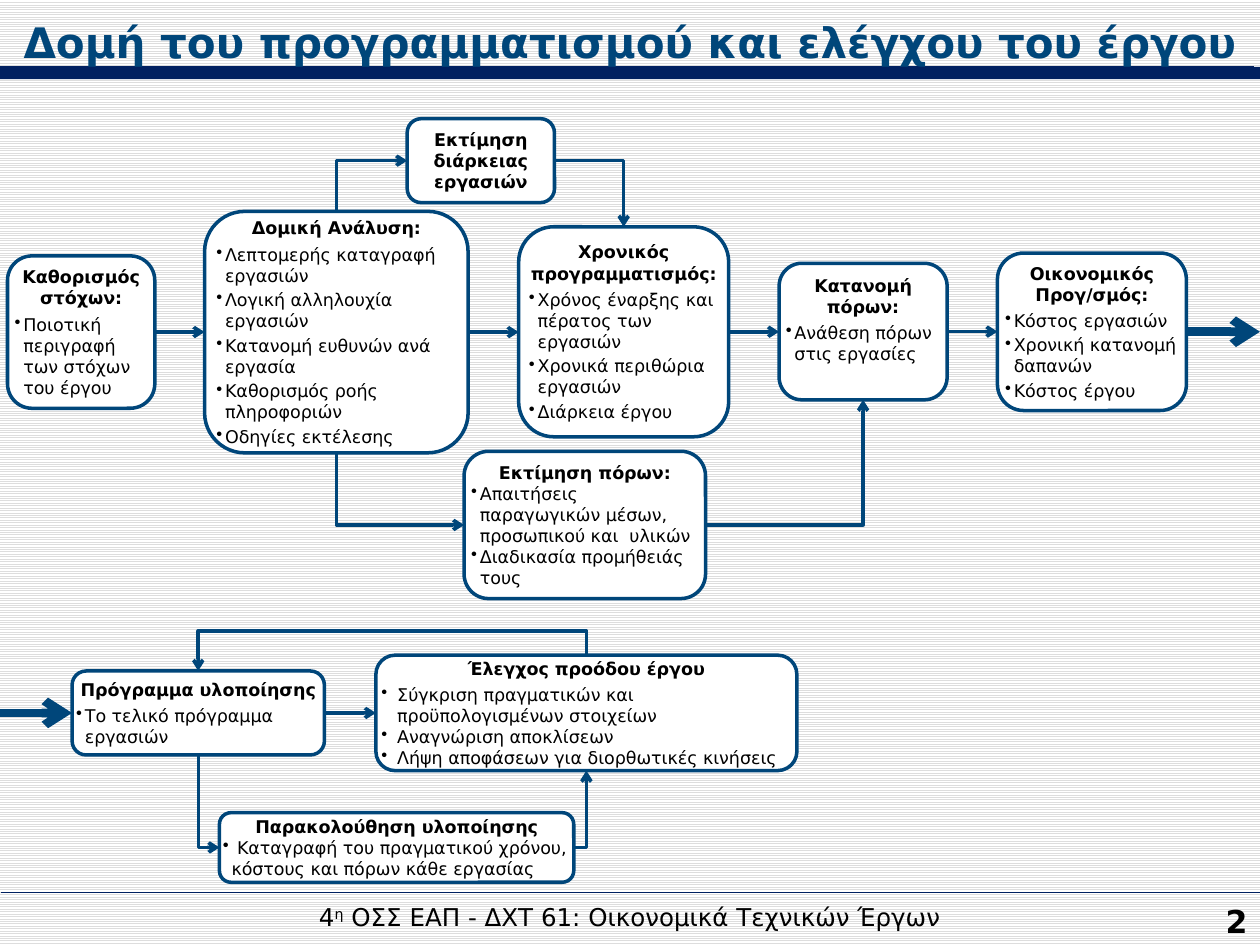
from pptx import Presentation
from pptx.dml.color import RGBColor
from pptx.enum.dml import MSO_PATTERN
from pptx.enum.shapes import MSO_CONNECTOR, MSO_SHAPE
from pptx.enum.text import MSO_ANCHOR, PP_ALIGN
from pptx.oxml.ns import qn
from pptx.util import Pt
from lxml.etree import SubElement

WIDE, HIGH = 720, 540
FONT = "DejaVu Sans"
HEX = {"blue": "00467A", "navy": "002060", "ink": "000000",
       "white": "FFFFFF", "stripe": "DDDDDD"}

TITLE = "Δομή του προγραμματισμού και ελέγχου του έργου"
FOOT = [("4", False), ("η", True),
        (" ΟΣΣ ΕΑΠ - ΔΧΤ 61: Οικονομικά Τεχνικών Έργων", False)]

# name: (left, top, width, height), heading, bullets,
#       (gap after heading, gap after bullet, indent)
BOXES = {
    "goals": ((4.3, 146.2, 84.2, 87.1), "Καθορισμός στόχων:",
              ["Ποιοτική περιγραφή των στόχων του έργου"], (3, 0, 5)),
    "parts": ((116.9, 120.8, 150.6, 138), "Δομική Ανάλυση:",
              ["Λεπτομερής καταγραφή εργασιών",
               "Λογική αλληλουχία εργασιών",
               "Κατανομή ευθυνών ανά εργασία",
               "Καθορισμός ροής πληροφοριών",
               "Οδηγίες εκτέλεσης"], (3, 2, 5)),
    "time": ((232.7, 67.8, 84.2, 48), "Εκτίμηση διάρκειας εργασιών",
             [], (3, 0, 5)),
    "plan": ((296.4, 129.6, 120, 120), "Χρονικός προγραμματισμός:",
             ["Χρόνος έναρξης και πέρατος των εργασιών",
              "Χρονικά περιθώρια εργασιών",
              "Διάρκεια έργου"], (3, 2, 5)),
    "share": ((445.2, 150.5, 96, 78), "Κατανομή πόρων:",
              ["Ανάθεση πόρων στις εργασίες"], (3, 2, 5)),
    "means": ((265.2, 257.9, 138, 84.2), "Εκτίμηση πόρων:",
              ["Απαιτήσεις παραγωγικών μέσων, προσωπικού και  υλικών",
               "Διαδικασία προμήθειάς τους"], (0, 0, 5)),
    "cost": ((570, 144.6, 108, 90), "Οικονομικός Προγ/σμός:",
             ["Κόστος εργασιών", "Χρονική κατανομή δαπανών",
              "Κόστος έργου"], (3, 2, 5)),
    "final": ((41.2, 383.4, 144.2, 48), "Πρόγραμμα υλοποίησης",
              ["Το τελικό πρόγραμμα εργασιών"], (3, 2, 5)),
    "check": ((214.8, 374.4, 240.6, 66), "Έλεγχος προόδου έργου",
              ["Σύγκριση πραγματικών και προϋπολογισμένων στοιχείων",
               "Αναγνώριση αποκλίσεων",
               "Λήψη αποφάσεων για διορθωτικές κινήσεις"], (3, 0, 9)),
    "track": ((125.4, 464.4, 202.5, 39.8), "Παρακολούθηση υλοποίησης",
              [" Καταγραφή του πραγματικού χρόνου, κόστους και πόρων "
               "κάθε εργασίας"], (0, 0, 5)),
}
FOOTROOM = {"share": 13.6}

STEPS = [("goals", "parts"), ("parts", "plan"), ("plan", "share"),
         ("share", "cost"), ("final", "check")]
# from box, side, to box, side
BENDS = [("parts", "top", "time", "left"), ("time", "right", "plan", "top"),
         ("parts", "base", "means", "left"),
         ("means", "right", "share", "base"),
         ("final", "base", "track", "left"),
         ("track", "right", "check", "base"),
         ("check", "top", "final", "top")]
LOOP = -153300  # how far the loop back rises above its boxes


def color(name):
    return RGBColor.from_string(HEX[name])


def style(par, size, bold=False, ink="ink", align=PP_ALIGN.LEFT):
    par.alignment = align
    font = par.font
    font.name, font.size, font.bold = FONT, Pt(size), bold
    font.color.rgb = color(ink)


def label(left, top, width, height, runs, **look):
    box = slide.shapes.add_textbox(Pt(left), Pt(top), Pt(width), Pt(height))
    box.text_frame.word_wrap = True
    par = box.text_frame.paragraphs[0]
    for text, raised in runs:
        run = par.add_run()
        run.text = text
        if raised:
            run.font._element.set("baseline", "30000")
    style(par, **look)


def line(start, end, ink="blue", weight=2, kind=MSO_CONNECTOR.STRAIGHT,
         head=True):
    wire = slide.shapes.add_connector(kind, *map(Pt, start + end))
    wire.line.color.rgb = color(ink)
    wire.line.width = Pt(weight)
    if head:
        SubElement(wire.line._get_or_add_ln(), qn("a:tailEnd"), type="arrow")
    SubElement(wire._element.spPr, qn("a:effectLst"))
    return wire


def side(name, edge):
    left, top, width, height = BOXES[name][0]
    return {"left": (left, top + height / 2),
            "right": (left + width, top + height / 2),
            "top": (left + width / 2, top),
            "base": (left + width / 2, top + height)}[edge]


def bend(first, out, last, into):
    start, end = side(first, out), side(last, into)
    steep = out in ("top", "base")
    if steep:  # lay the path flat about its centre, then turn it
        mx, my = (start[0] + end[0]) / 2, (start[1] + end[1]) / 2
        start, end = [(mx - (y - my), my + (x - mx)) for x, y in (start, end)]
    wire = line(start, end, kind=MSO_CONNECTOR.ELBOW)
    props = wire._element.spPr
    if steep:
        props.find(qn("a:xfrm")).set("rot", str(270 * 60000))
    shape = props.find(qn("a:prstGeom"))
    if out == into:
        SubElement(shape.find(qn("a:avLst")), qn("a:gd"),
                   name="adj1", fmla=f"val {LOOP}")
    else:
        shape.set("prst", "bentConnector2")


def card(name):
    place, head, items, (gap, space, indent) = BOXES[name]
    box = slide.shapes.add_shape(MSO_SHAPE.ROUNDED_RECTANGLE, *map(Pt, place))
    box.shadow.inherit = False
    box.fill.solid()
    box.fill.fore_color.rgb = color("white")
    box.line.color.rgb = color("blue")
    box.line.width = Pt(2)
    frame = box.text_frame
    frame.word_wrap = True
    frame.vertical_anchor = MSO_ANCHOR.MIDDLE
    frame.margin_left = frame.margin_right = frame.margin_top = 0
    frame.margin_bottom = Pt(FOOTROOM.get(name, 0))
    par = frame.paragraphs[0]
    par.text = head
    par.space_after = Pt(gap)
    style(par, 10, bold=True, align=PP_ALIGN.CENTER)
    for item in items:
        par = frame.add_paragraph()
        par.text = item
        props = par._p.get_or_add_pPr()
        props.set("marL", str(Pt(indent)))
        props.set("indent", str(-Pt(indent)))
        SubElement(props, qn("a:buChar"), char="•")
        par.space_after = Pt(space)
        style(par, 10)


deck = Presentation()
deck.slide_width, deck.slide_height = Pt(WIDE), Pt(HIGH)
slide = deck.slides.add_slide(deck.slide_layouts[6])

# Striped background
back = slide.background.fill
back.patterned()
back.pattern = MSO_PATTERN.LIGHT_HORIZONTAL
back.fore_color.rgb = color("stripe")
back.back_color.rgb = color("white")

# Footer, title bar and title
line((0.7, 509.8), (WIDE, 509.8), "navy", 0.25, head=False)
label(0, 512, WIDE, 24.5, FOOT, size=14, align=PP_ALIGN.CENTER)
bar = slide.shapes.add_shape(MSO_SHAPE.RECTANGLE, 0, Pt(38.2), Pt(WIDE), Pt(7))
bar.shadow.inherit = False
bar.fill.solid()
bar.fill.fore_color.rgb = color("navy")
bar.line.fill.background()
line((0, 38.2), (716.4, 38.2), "navy", 0.75, head=False)
label(624, 512, 96, 29, [("2", False)], size=18, bold=True,
      align=PP_ALIGN.RIGHT)
label(0, 5.8, WIDE, 36, [(TITLE, False)], size=24, bold=True, ink="blue",
      align=PP_ALIGN.CENTER)

# Boxes
for name in BOXES:
    card(name)

# Straight arrows, level with the box they leave
for first, last in STEPS:
    x, y = side(first, "right")
    line((x, y), (side(last, "left")[0], y))

# Bent arrows
for path in BENDS:
    bend(*path)

# Thick arrows that carry on from one row to the next
x, y = side("cost", "right")
line((x + 1, y), (WIDE, y), weight=5)
x, y = side("final", "left")
line((0, y), (x, y), weight=5)

deck.save("out.pptx")
